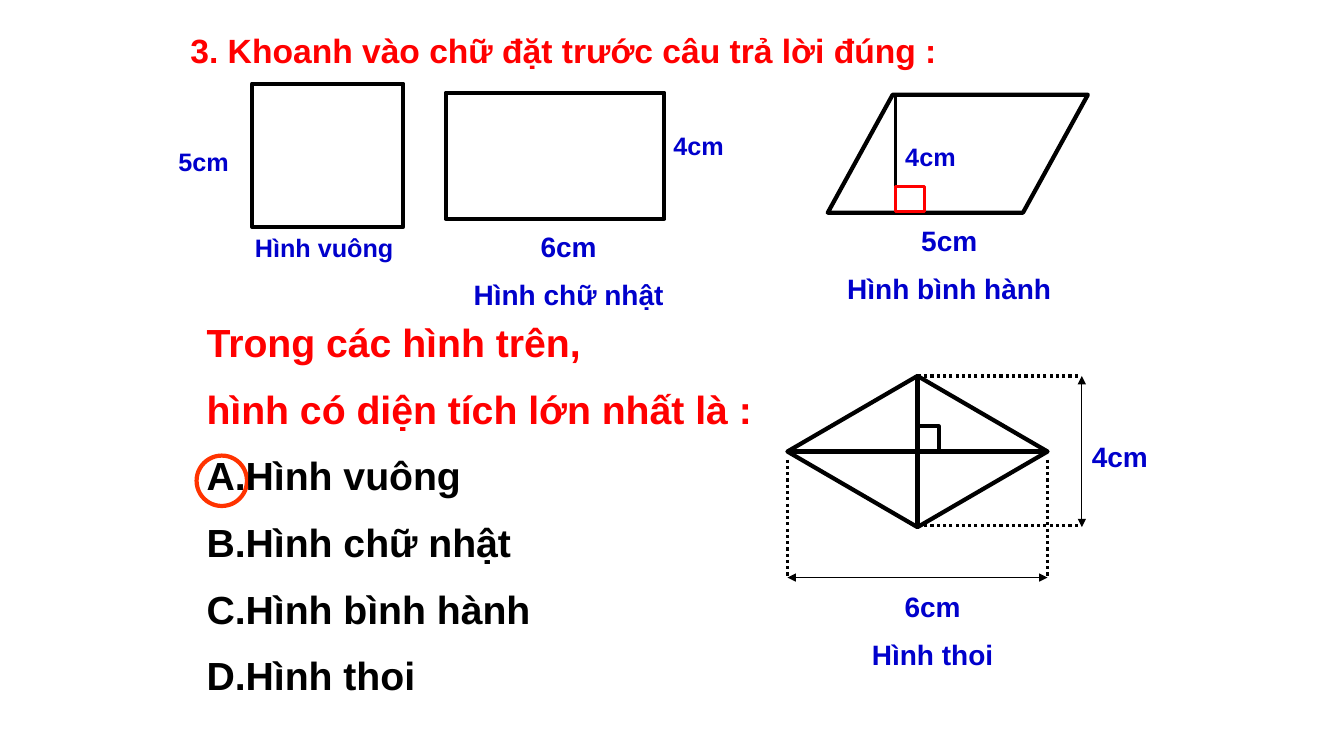
from typing import NamedTuple, Optional

from lxml import etree
from pptx import Presentation
from pptx import util as u
from pptx.dml.color import RGBColor
from pptx.enum import dml, shapes, text
from pptx.oxml import ns

HUES = {"ink": "000000", "blue": "0000CC", "red": "FF0000", "ring": "FF3300"}
KINDS = shapes.MSO_SHAPE


class Figure(NamedTuple):
    kind: KINDS
    left: float
    top: float
    width: float
    height: float
    hue: str = "ink"
    weight: float = 3


class Stroke(NamedTuple):
    x1: float
    y1: float
    x2: float
    y2: float
    weight: float = 2.25
    dotted: bool = False
    arrows: bool = False


class Line(NamedTuple):
    words: str
    hue: str = "blue"
    mark: Optional[str] = None


class Label(NamedTuple):
    left: float
    top: float
    width: float
    height: float
    size: int
    lines: list[Line]
    centred: bool = True
    hang: float = 0


def tint(name: str) -> RGBColor:
    return RGBColor.from_string(HUES[name])


def add(parent, tag: str, **attrs: str):
    return etree.SubElement(parent, ns.qn(tag), **attrs)


def draw_figure(slide, fig: Figure):
    shape = slide.shapes.add_shape(fig.kind, *map(u.Inches, fig[1:5]))
    shape.shadow.inherit = False
    shape.fill.background()
    shape.line.color.rgb = tint(fig.hue)
    shape.line.width = u.Pt(fig.weight)
    return shape


def draw_stroke(slide, stroke: Stroke):
    line = slide.shapes.add_connector(
        shapes.MSO_CONNECTOR.STRAIGHT, *map(u.Inches, stroke[:4]))
    line.line.color.rgb = tint("ink")
    line.line.width = u.Pt(stroke.weight)
    if stroke.dotted:
        line.line.dash_style = dml.MSO_LINE.ROUND_DOT
    if stroke.arrows:
        for end in ("a:headEnd", "a:tailEnd"):
            add(line.line._get_or_add_ln(), end, type="triangle")
    add(line._element.spPr, "a:effectLst")
    return line


def draw_label(slide, label: Label) -> None:
    frame = slide.shapes.add_textbox(*map(u.Inches, label[:4])).text_frame
    frame.word_wrap = True
    frame.auto_size = text.MSO_AUTO_SIZE.SHAPE_TO_FIT_TEXT
    for i, line in enumerate(label.lines):
        para = frame.add_paragraph() if i else frame.paragraphs[0]
        para.text = line.words
        para.alignment = text.PP_ALIGN.CENTER if label.centred else text.PP_ALIGN.LEFT
        props = para._p.get_or_add_pPr()
        add(add(props, "a:spcBef"), "a:spcPct", val="50000")
        if label.hang:
            props.set("marL", str(u.Inches(label.hang)))
            props.set("indent", str(-u.Inches(label.hang)))
        if line.mark:
            add(props, "a:buFontTx")
            add(props, "a:buAutoNum", type=line.mark)
        font = para.font
        font.name, font.size, font.bold = "Arial", u.Pt(label.size), True
        font.color.rgb = tint(line.hue)


def draw_rhombus(slide, left: float, top: float, width: float, height: float) -> None:
    """Draw the rhombus with its diagonals, guides and dimension arrows."""
    right, base = left + width, top + height
    mid, axis = left + width / 2, top + height / 2
    foot, side = base + 0.5, right + 0.34
    rhombus = draw_figure(slide, Figure(KINDS.DIAMOND, left, top, width, height))
    for start, end, ends in ((1, 3, (left, axis, right, axis)),
                             (0, 2, (mid, top, mid, base))):
        line = draw_stroke(slide, Stroke(*ends, weight=3))
        line.begin_connect(rhombus, start)
        line.end_connect(rhombus, end)
    draw_figure(slide, Figure(KINDS.RECTANGLE, mid, axis - 0.25, 0.21, 0.25))
    for x in (left, right):
        draw_stroke(slide, Stroke(x, axis + 0.08, x, foot, dotted=True))
    for y in (top, base - 0.02):
        draw_stroke(slide, Stroke(side - 0.04, y, mid, y, dotted=True))
    for ends in ((left, foot, right, foot), (side, top, side, base)):
        draw_stroke(slide, Stroke(*ends, weight=0.75, arrows=True))


FIGURES = [
    Figure(KINDS.RECTANGLE, 2.5, 0.83, 1.5, 1.42),
    Figure(KINDS.RECTANGLE, 4.42, 0.92, 2.17, 1.25),
    Figure(KINDS.RECTANGLE, 8.88, 1.85, 0.29, 0.25, "red", 2.25),
    Figure(KINDS.OVAL, 1.95, 4.52, 0.5, 0.5, "ring"),
]
CHOICES = ["Hình vuông", "Hình chữ nhật", "Hình bình hành", "Hình thoi"]
QUERY = ["Trong các hình trên,", "hình có diện tích lớn nhất là :"]
LABELS = [
    Label(1.79, 0.25, 7.92, 0.5, 24,
          [Line("3. Khoanh vào chữ đặt trước câu trả lời đúng :", "red")], False),
    Label(1.67, 1.4, 0.92, 0.4, 18, [Line("5cm")], False),
    Label(6.58, 1.24, 0.92, 0.4, 18, [Line("4cm")], False),
    Label(8.88, 1.35, 0.92, 0.4, 18, [Line("4cm")], False),
    Label(10.73, 4.31, 0.92, 0.44, 20, [Line("4cm")], False),
    Label(2.25, 2.26, 2, 0.4, 18, [Line("Hình vuông ")]),
    Label(4.42, 2.23, 2.44, 0.94, 20, [Line("6cm"), Line("Hình chữ nhật")]),
    Label(8.04, 2.17, 2.75, 0.94, 20, [Line("5cm"), Line("Hình bình hành")]),
    Label(8.25, 5.8, 2, 0.94, 20, [Line("6cm"), Line("Hình thoi")]),
    Label(1.95, 3.11, 5.72, 4.11, 28,
          [Line(words, "red") for words in QUERY]
          + [Line(words, "ink", "alphaUcPeriod") for words in CHOICES],
          False, 0.38),
]


def main() -> None:
    deck = Presentation()
    deck.slide_width, deck.slide_height = u.Inches(13.33), u.Inches(7.5)
    slide = deck.slides.add_slide(deck.slide_layouts[6])
    slant = draw_figure(slide, Figure(KINDS.PARALLELOGRAM, 8.21, 0.94, 2.58, 1.17))
    slant.adjustments[0] = 0.55
    draw_stroke(slide, Stroke(8.88, 0.94, 8.88, 2.1))
    draw_rhombus(slide, 7.81, 3.73, 2.58, 1.5)
    for fig in FIGURES:
        draw_figure(slide, fig)
    for label in LABELS:
        draw_label(slide, label)
    deck.save("out.pptx")


if __name__ == "__main__":
    main()
